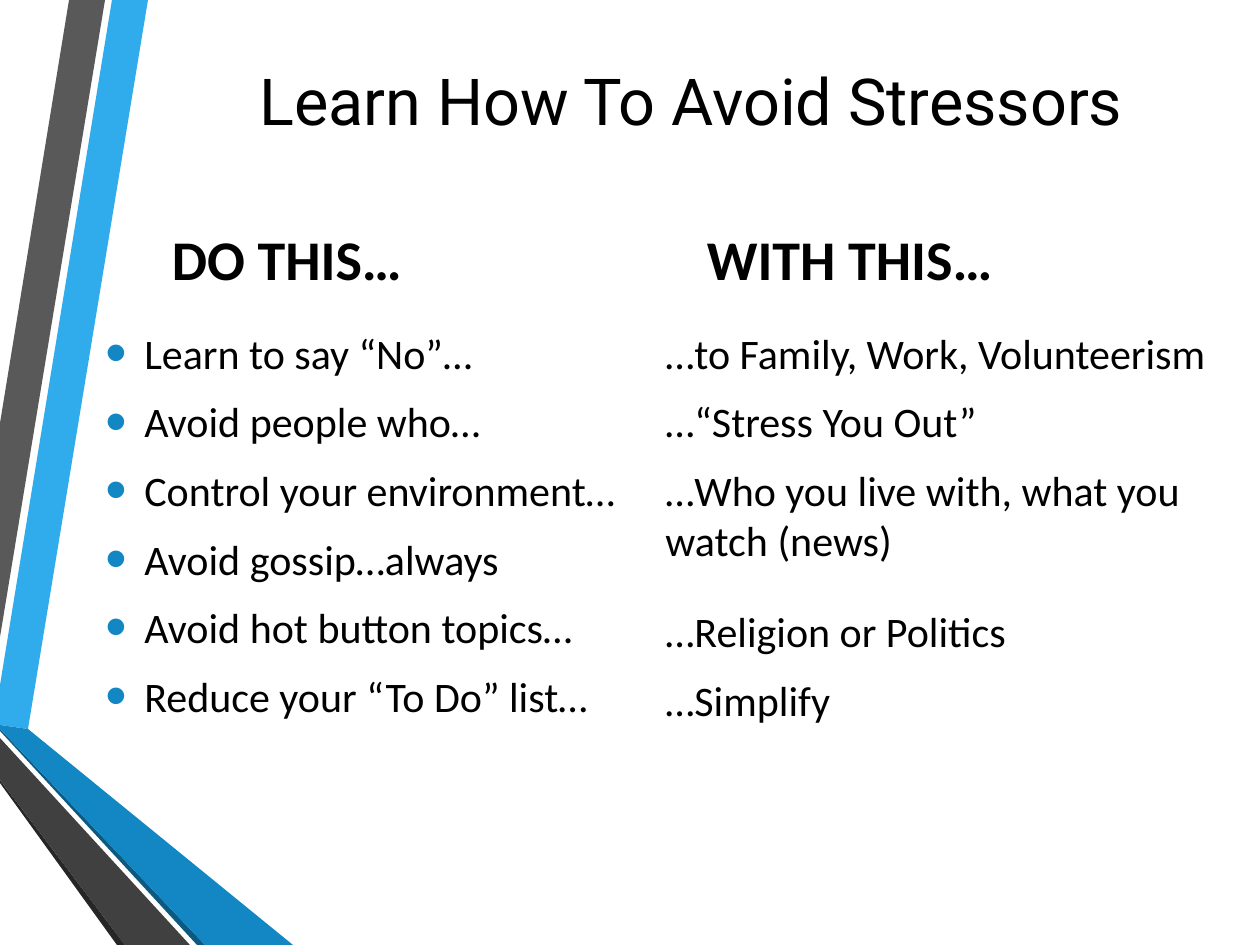
from dataclasses import dataclass

from lxml.etree import SubElement
from pptx import Presentation
from pptx.dml.color import RGBColor
from pptx.enum.shapes import MSO_SHAPE as Preset
from pptx.enum.text import MSO_ANCHOR as Anchor, PP_ALIGN as Align
from pptx.oxml.ns import qn
from pptx.util import Emu, Pt

PX_PER_INCH = 126


def px(length):
    return Emu(round(length * 914400 / PX_PER_INCH))


@dataclass(frozen=True)
class Theme:
    text: str = "000000"
    sky: str = "30ACEC"
    blue: str = "1287C3"
    navy: str = "0C5A82"
    gray: str = "595959"
    dark_gray: str = "404040"
    charcoal: str = "262626"
    title_font: str = "Roboto"
    body_font: str = "Calibri"
    title_size: int = 37
    heading_size: int = 32
    body_size: int = 24
    space_before: float = 4.4
    space_after: int = 6
    section_gap: float = 17.2


def add_bullet(paragraph, color, indent):
    properties = paragraph._p.get_or_add_pPr()
    properties.set("marL", str(indent))
    properties.set("indent", str(-indent))
    bullet_color = SubElement(properties, qn("a:buClr"))
    SubElement(bullet_color, qn("a:srgbClr"), val=color)
    SubElement(properties, qn("a:buSzPct"), val="145000")
    SubElement(properties, qn("a:buFont"), typeface="Arial")
    SubElement(properties, qn("a:buChar"), char="•")


def write(paragraph, text, *, font, size, color, bold=False, align=Align.LEFT,
          before=0, after=0, bullet=None):
    paragraph.alignment = align
    paragraph.space_before = Pt(before)
    paragraph.space_after = Pt(after)
    if bullet:
        add_bullet(paragraph, bullet, px(39))
    run = paragraph.add_run()
    run.text = text
    run.font.name = font
    run.font.size = Pt(size)
    run.font.bold = bold
    run.font.color.rgb = RGBColor.from_string(color)


class SlideBuilder:
    def __init__(self, slide, theme):
        self.slide = slide
        self.theme = theme

    def ribbon(self, color, points):
        start, *rest = [(px(x), px(y)) for x, y in points]
        builder = self.slide.shapes.build_freeform(*start, scale=1.0)
        builder.add_line_segments(rest, close=True)
        shape = builder.convert_to_shape()
        shape.shadow.inherit = False
        shape.fill.solid()
        shape.fill.fore_color.rgb = RGBColor.from_string(color)
        shape.line.fill.background()

    def text_frame(self, left, top, width, height):
        box = self.slide.shapes.add_textbox(px(left), px(top), px(width), px(height))
        box.text_frame.word_wrap = True
        return box.text_frame

    def title(self, text, left, top, width, height):
        frame = self.text_frame(left, top, width, height)
        write(frame.paragraphs[0], text, font=self.theme.title_font,
              size=self.theme.title_size, color=self.theme.text, align=Align.CENTER)

    def heading(self, text, left, top, width, height):
        shape = self.slide.shapes.add_shape(
            Preset.ROUNDED_RECTANGLE, px(left), px(top), px(width), px(height))
        shape.shadow.inherit = False
        shape.fill.background()
        shape.line.fill.background()
        shape.text_frame.word_wrap = True
        shape.text_frame.vertical_anchor = Anchor.MIDDLE
        write(shape.text_frame.paragraphs[0], text, font=self.theme.body_font,
              size=self.theme.heading_size, color=self.theme.text, bold=True)

    def column(self, lines, left, top, width, height, bullet=None, section_start=None):
        theme = self.theme
        frame = self.text_frame(left, top, width, height)
        for index, line in enumerate(lines):
            paragraph = frame.add_paragraph() if index else frame.paragraphs[0]
            before = theme.space_before if index else 0
            if line == section_start:
                before = theme.section_gap
            write(paragraph, line, font=theme.body_font, size=theme.body_size,
                  color=theme.text, before=before, after=theme.space_after, bullet=bullet)


def main():
    presentation = Presentation()
    presentation.slide_width = px(1260)
    presentation.slide_height = px(945)
    theme = Theme()
    slide = presentation.slides.add_slide(presentation.slide_layouts[6])
    builder = SlideBuilder(slide, theme)

    ribbons = [
        (theme.sky, [(0, 685), (0, 725), (28, 729), (148, 0), (112, 0)]),
        (theme.gray, [(105, 0), (69, 0), (0, 423), (0, 637)]),
        (theme.charcoal, [(0, 780), (0, 783), (117, 945), (125, 945)]),
        (theme.navy, [(0, 729), (0, 731), (197, 945), (205, 945)]),
        (theme.blue, [(0, 729), (205, 945), (293, 945), (28, 729), (0, 725)]),
        (theme.dark_gray, [(0, 780), (125, 945), (190, 945), (0, 738)]),
    ]
    for color, points in ribbons:
        builder.ribbon(color, points)

    actions = ["Learn to say “No”…", "Avoid people who…", "Control your environment…",
               "Avoid gossip…always", "Avoid hot button topics…",
               "Reduce your “To Do” list…"]
    targets = ["…to Family, Work, Volunteerism", "…“Stress You Out”",
               "…Who you live with, what you watch (news)",
               "…Religion or Politics", "…Simplify"]
    builder.column(actions, 93, 321, 566, 536, bullet=theme.blue)
    builder.column(targets, 653, 321, 588, 536, section_start="…Religion or Politics")
    builder.heading("DO THIS…", 155, 213, 504, 91)
    builder.heading("WITH THIS…", 690, 213, 504, 91)
    builder.title("Learn How To Avoid Stressors", 171, 55, 1040, 158)
    presentation.save("out.pptx")


if __name__ == "__main__":
    main()
